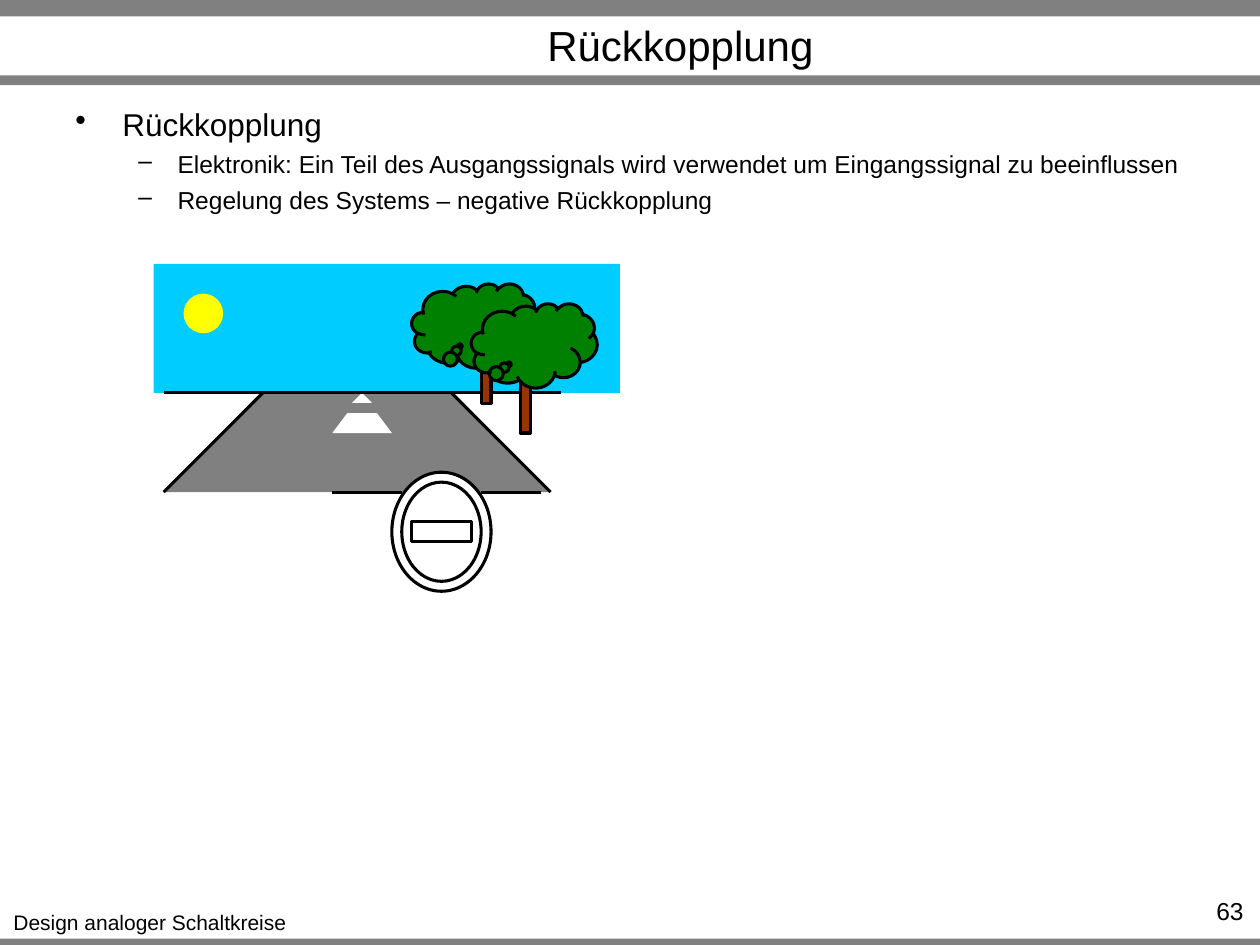
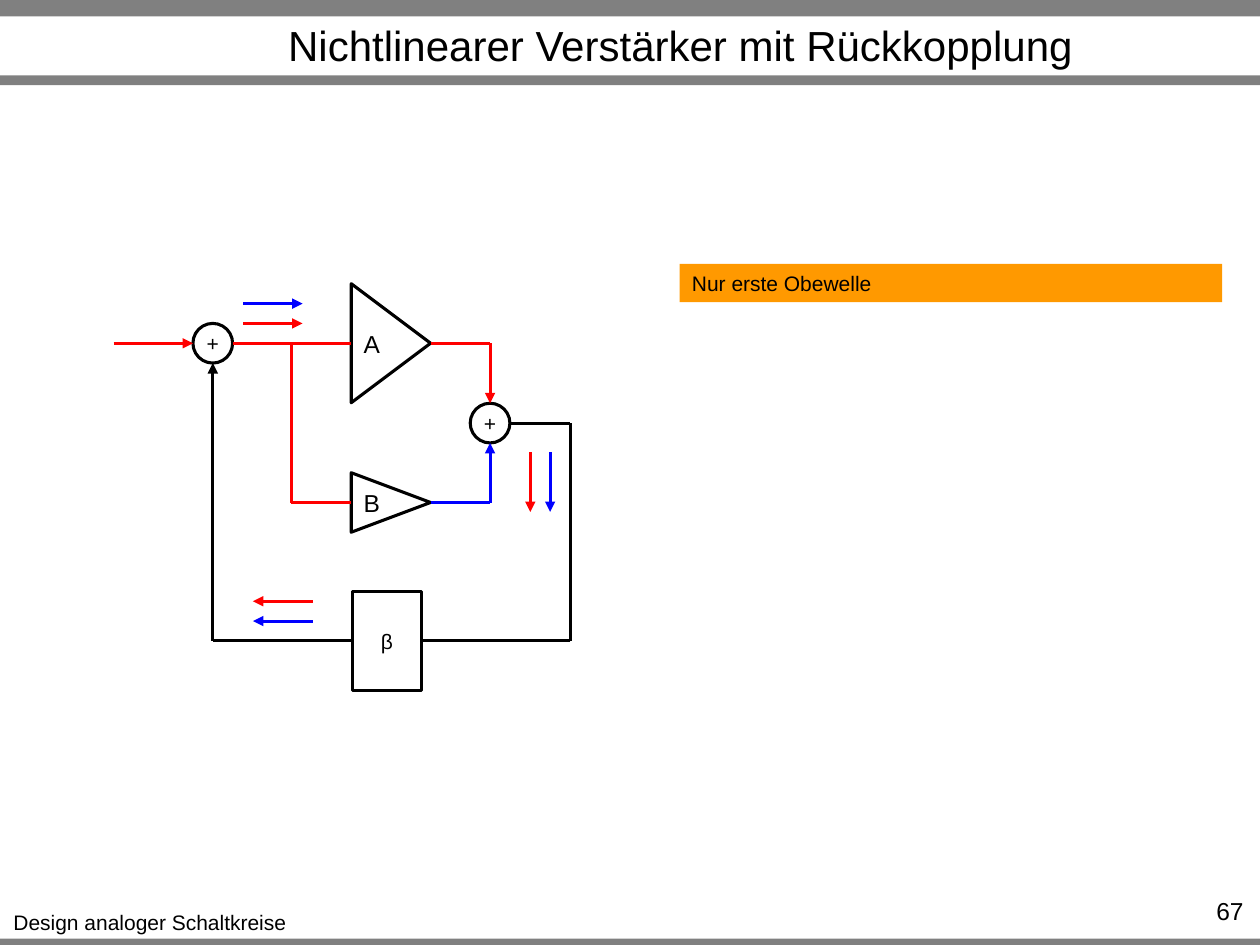
from dataclasses import dataclass
from itertools import pairwise

from lxml.etree import SubElement
from pptx import Presentation
from pptx.dml.color import RGBColor
from pptx.enum.shapes import MSO_CONNECTOR as Connector, MSO_SHAPE as Preset
from pptx.enum.text import MSO_ANCHOR as Anchor, PP_ALIGN as Align
from pptx.oxml.ns import qn
from pptx.util import Cm, Pt


@dataclass(frozen=True)
class Theme:
    font: str = "Arial"
    black: str = "000000"
    white: str = "FFFFFF"
    gray: str = "808080"
    sky: str = "00CCFF"
    sun: str = "FFFF00"
    leaf: str = "008000"
    trunk: str = "993300"
    red: str = "FF0000"
    blue: str = "0000FF"
    orange: str = "FF9900"
    title_size: float = 24
    heading_size: float = 18
    text_size: float = 14
    small_size: float = 12
    bullet_gap: float = 3.6
    stroke: float = 1.75


class Deck:
    """Holds the theme and the slide being drawn; all lengths are in cm."""

    width, height = 25.4, 19.05

    def __init__(self, theme):
        self.theme = theme
        self.presentation = Presentation()
        self.presentation.slide_width = Cm(self.width)
        self.presentation.slide_height = Cm(self.height)
        self.slide = None

    def new_slide(self, title, number):
        layout = self.presentation.slide_layouts[5]
        self.slide = self.presentation.slides.add_slide(layout)
        # Bands
        for top, height in ((18.92, 0.2), (0, 0.33), (1.52, 0.2)):
            self.shape(Preset.RECTANGLE, 0, top, self.width, height, fill=self.theme.gray)
        # Title
        placeholder = self.slide.shapes.title
        placeholder.left, placeholder.top = Cm(3.3), Cm(0.42)
        placeholder.width, placeholder.height = Cm(20.83), Cm(0.97)
        frame = placeholder.text_frame
        frame.margin_top = frame.margin_bottom = 0
        self.set_text(placeholder, title, self.theme.title_size, Align.CENTER, Anchor.MIDDLE)
        # Footer and slide number
        self.text("Design analoger Schaltkreise", 0, 18.21, 6.05, 0.76,
                  self.theme.small_size, Align.CENTER, wrap=False)
        self.text(number, 23.11, 17.93, 2.21, 0.61, self.theme.text_size, Align.RIGHT)

    def style(self, paragraph, size, align=Align.LEFT):
        paragraph.alignment = align
        font = paragraph.font
        font.name, font.size = self.theme.font, Pt(size)
        font.color.rgb = RGBColor.from_string(self.theme.black)

    def set_text(self, shape, text, size, align=Align.LEFT, anchor=Anchor.TOP, wrap=True):
        frame = shape.text_frame
        frame.text = text
        frame.word_wrap = wrap
        frame.vertical_anchor = anchor
        self.style(frame.paragraphs[0], size, align)

    def text(self, text, left, top, width, height, size, align, wrap=True):
        box = self.slide.shapes.add_textbox(Cm(left), Cm(top), Cm(width), Cm(height))
        self.set_text(box, text, size, align, wrap=wrap)

    def bullets(self, items, left, top, width, height):
        levels = (("•", 0.95, -0.95, self.theme.heading_size),
                  ("–", 2.06, -0.79, self.theme.text_size))
        box = self.slide.shapes.add_textbox(Cm(left), Cm(top), Cm(width), Cm(height))
        frame = box.text_frame
        frame.word_wrap = True
        for index, (level, text) in enumerate(items):
            paragraph = frame.add_paragraph() if index else frame.paragraphs[0]
            paragraph.text, paragraph.level = text, level
            mark, margin, indent, size = levels[level]
            if index:
                paragraph.space_before = Pt(self.theme.bullet_gap)
            properties = paragraph._p.get_or_add_pPr()
            properties.set("marL", str(Cm(margin)))
            properties.set("indent", str(Cm(indent)))
            SubElement(properties, qn("a:buChar")).set("char", mark)
            self.style(paragraph, size)

    def paint(self, shape, fill=None, line=None):
        shape.shadow.inherit = False
        if fill:
            shape.fill.solid()
            shape.fill.fore_color.rgb = RGBColor.from_string(fill)
        else:
            shape.fill.background()
        if line:
            shape.line.color.rgb = RGBColor.from_string(line)
            shape.line.width = Pt(self.theme.stroke)
        else:
            shape.line.fill.background()

    def shape(self, preset, left, top, width, height, fill=None, line=None, adjust=()):
        shape = self.slide.shapes.add_shape(preset, Cm(left), Cm(top), Cm(width), Cm(height))
        for index, value in enumerate(adjust):
            shape.adjustments[index] = value
        self.paint(shape, fill, line)
        return shape

    def trapezoid(self, left, top, width, height, slant, fill):
        right, bottom = left + width, top + height
        builder = self.slide.shapes.build_freeform(Cm(left), Cm(bottom))
        corners = ((left + slant, top), (right - slant, top), (right, bottom))
        builder.add_line_segments([(Cm(x), Cm(y)) for x, y in corners])
        self.paint(builder.convert_to_shape(), fill)

    def wire(self, color, *points, arrow=False):
        """Joins the points with straight lines; the arrowhead ends the last one."""
        for start, end in pairwise(points):
            line = self.slide.shapes.add_connector(
                Connector.STRAIGHT, *(Cm(value) for value in (*start, *end)))
            line.line.color.rgb = RGBColor.from_string(color)
            line.line.width = Pt(self.theme.stroke)
            if arrow and end == points[-1]:
                SubElement(line.line._get_or_add_ln(), qn("a:tailEnd")).set("type", "triangle")
            SubElement(line._element.spPr, qn("a:effectLst"))

    def block(self, preset, text, left, top, width, height, size):
        shape = self.shape(preset, left, top, width, height, line=self.theme.black)
        self.set_text(shape, text, size, Align.CENTER, Anchor.MIDDLE, wrap=False)
        return shape

    def adder(self, x, y):
        self.block(Preset.OVAL, "+", x - 0.4, y - 0.4, 0.8, 0.8, self.theme.small_size)

    def amplifier(self, text, left, middle, length, breadth):
        """Triangle pointing right, with its letter kept upright."""
        shape = self.block(Preset.ISOSCELES_TRIANGLE, text, left + (length - breadth) / 2,
                           middle - length / 2, breadth, length, self.theme.text_size)
        shape.rotation = 90
        body = shape.text_frame._txBody.bodyPr
        body.set("vert", "eaVert")
        body.set("rot", "10800000")


def feedback_slide(deck):
    theme = deck.theme
    deck.new_slide("Rückkopplung", "63")
    deck.bullets((
        (0, "Rückkopplung"),
        (1, "Elektronik: Ein Teil des Ausgangssignals wird verwendet um Eingangssignal zu beeinflussen"),
        (1, "Regelung des Systems – negative Rückkopplung"),
    ), 1.27, 2, 22.86, 16.5)

    # Sky and road
    horizon, road_end = 7.92, 9.92
    deck.shape(Preset.RECTANGLE, 3.1, 5.32, 9.4, 2.6, fill=theme.sky)
    deck.trapezoid(3.3, horizon, 7.8, 2, 1.95, theme.gray)
    deck.trapezoid(6.7, 8.33, 1.2, 0.4, 0.3, theme.white)
    deck.shape(Preset.ISOSCELES_TRIANGLE, 7.1, horizon, 0.4, 0.2, fill=theme.white)

    # Steering wheel, dashboard and road edges
    deck.shape(Preset.OVAL, 7.9, 9.52, 2, 2.4, theme.white, theme.black)
    deck.shape(Preset.RECTANGLE, 8.3, 10.52, 1.2, 0.4, line=theme.black)
    deck.shape(Preset.OVAL, 8.1, 9.72, 1.6, 2, line=theme.black)
    for start, end in (
        ((6.7, road_end), (8.1, road_end)),
        ((9.7, road_end), (10.9, road_end)),
        ((3.3, horizon), (11.3, horizon)),
        ((9.1, horizon), (11.1, road_end)),
        ((5.3, horizon), (3.3, road_end)),
    ):
        deck.wire(theme.black, start, end)

    # Trees and sun
    def crown(left, top, adjust):
        deck.shape(Preset.CLOUD_CALLOUT, left, top, 2.54, 1.7, theme.leaf, theme.black, adjust)

    crown(8.3, 5.72, (-0.118, 0.242))
    for left, top in ((9.7, 6.93), (10.49, 7.53)):
        deck.shape(Preset.RECTANGLE, left, top, 0.2, 1.2, theme.trunk, theme.black)
    crown(9.5, 6.12, (-0.201, 0.221))
    deck.shape(Preset.OVAL, 3.7, 5.92, 0.8, 0.8, fill=theme.sun)


def amplifier_slide(deck):
    theme = deck.theme
    deck.new_slide("Nichtlinearer Verstärker mit Rückkopplung", "67")
    input_x, branch_x, amp_x, amp_end, output_x, return_x = 4.29, 5.87, 7.08, 8.68, 9.88, 11.5
    a_y, sum_y, b_y, beta_y = 6.92, 8.53, 10.13, 12.92

    # Blocks
    deck.amplifier("A", amp_x, a_y, 1.6, 2.4)
    deck.amplifier("B", amp_x, b_y, 1.6, 1.2)
    deck.adder(input_x, a_y)
    deck.adder(output_x, sum_y)
    deck.block(Preset.RECTANGLE, "β", 7.1, beta_y - 1, 1.4, 2, theme.small_size)

    # Signal paths
    deck.wire(theme.red, (2.29, a_y), (input_x - 0.4, a_y), arrow=True)
    deck.wire(theme.red, (input_x + 0.4, a_y), (amp_x, a_y))
    deck.wire(theme.red, (branch_x, a_y), (branch_x, b_y), (amp_x, b_y))
    deck.wire(theme.red, (amp_end, a_y), (output_x, a_y), (output_x, sum_y - 0.4), arrow=True)
    deck.wire(theme.blue, (amp_end, b_y), (output_x, b_y), (output_x, sum_y + 0.4), arrow=True)
    deck.wire(theme.black, (output_x + 0.4, sum_y), (return_x, sum_y),
              (return_x, beta_y), (8.5, beta_y))
    deck.wire(theme.black, (7.1, beta_y), (input_x, beta_y), (input_x, a_y + 0.4), arrow=True)

    # Signal components: pairs of arrows, 0.4 cm apart
    for color, start, end in (
        (theme.blue, (4.9, 6.12), (6.1, 6.12)),
        (theme.red, (4.9, 6.52), (6.1, 6.52)),
        (theme.red, (10.69, 9.12), (10.69, 10.32)),
        (theme.blue, (11.09, 9.12), (11.09, 10.32)),
        (theme.red, (6.3, 12.12), (5.1, 12.12)),
        (theme.blue, (6.3, 12.52), (5.1, 12.52)),
    ):
        deck.wire(color, start, end, arrow=True)

    # Note
    note = deck.shape(Preset.RECTANGLE, 13.7, 5.32, 10.94, 0.77, fill=theme.orange)
    deck.set_text(note, "Nur erste Obewelle", theme.small_size)


def main():
    deck = Deck(Theme())
    feedback_slide(deck)
    amplifier_slide(deck)
    deck.presentation.save("out.pptx")


if __name__ == "__main__":
    main()
